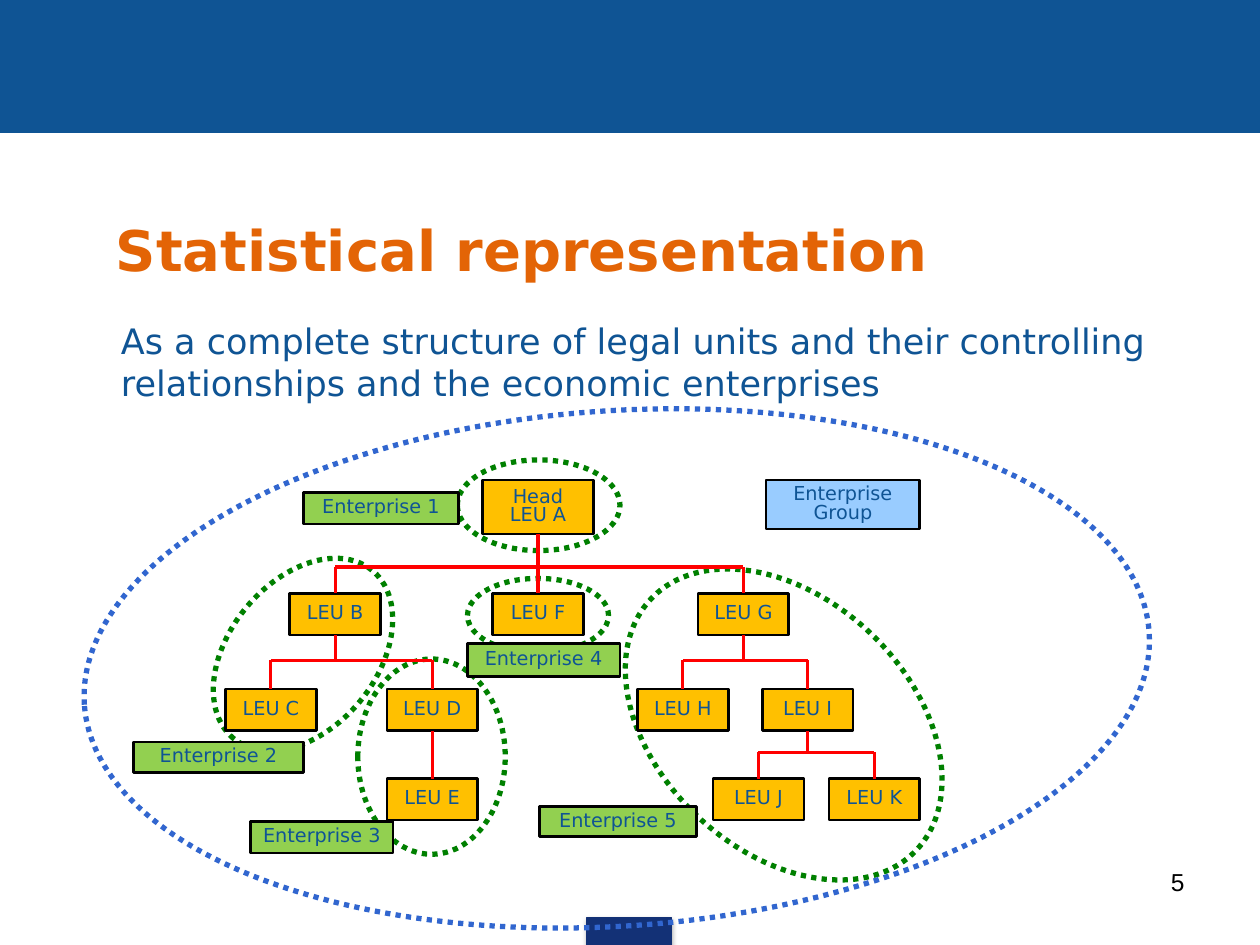
from lxml import etree
from pptx import Presentation
from pptx.dml.color import RGBColor
from pptx.enum.dml import MSO_LINE
from pptx.enum.shapes import MSO_CONNECTOR, MSO_SHAPE
from pptx.enum.text import MSO_ANCHOR, PP_ALIGN
from pptx.oxml import parse_xml
from pptx.oxml.ns import nsdecls, qn
from pptx.util import Inches, Pt

RECT, OVAL = MSO_SHAPE.RECTANGLE, MSO_SHAPE.OVAL
STRAIGHT = MSO_CONNECTOR.STRAIGHT
DOTS = MSO_LINE.ROUND_DOT  # written as sysDot
MIDDLE, TOP = MSO_ANCHOR.MIDDLE, MSO_ANCHOR.TOP
LEFT, CENTER, RIGHT = PP_ALIGN.LEFT, PP_ALIGN.CENTER, PP_ALIGN.RIGHT

BLUE = RGBColor(0x0F, 0x54, 0x94)
NAVY = RGBColor(0x13, 0x31, 0x76)
SKY = RGBColor(0x99, 0xCC, 0xFF)
ROYAL = RGBColor(0x31, 0x66, 0xCF)
GREEN = RGBColor(0x00, 0x80, 0x00)
LIME = RGBColor(0x92, 0xD0, 0x50)
AMBER = RGBColor(0xFF, 0xC0, 0x00)
ORANGE = RGBColor(0xE3, 0x64, 0x06)
RED = RGBColor(0xFF, 0x00, 0x00)
BLACK = RGBColor(0x00, 0x00, 0x00)

TITLE = "Statistical representation"
BODY = ("As a complete structure of legal units and their controlling "
        "relationships and the economic enterprises")

# Legal units: letter -> (left, level)
UNITS = {
    "B": (2.3, 1), "F": (3.91, 1), "G": (5.54, 1),
    "C": (1.79, 2), "D": (3.07, 2), "H": (5.06, 2), "I": (6.05, 2),
    "E": (3.07, 3), "J": (5.66, 3), "K": (6.58, 3),
}
LEVELS = [3.81, 4.71, 5.47, 6.18]
UNIT_W, UNIT_H = 0.72, 0.33
HEAD = (3.83, LEVELS[0], 0.88, 0.43)

# Control: parent -> (children, height of the shared bar)
CONTROL = {"A": ("BFG", 4.5), "B": ("CD", 5.24), "G": ("HI", 5.24),
           "D": ("E", None), "I": ("JK", 5.97)}

# Outlines of enterprises 1 to 5: left, top, width, height, rotation
RINGS = [
    (3.63, 3.65, 1.29, 0.72, 0),
    (1.54, 4.61, 1.73, 1.17, 309.5),
    (2.84, 5.23, 1.17, 1.55, 0),
    (3.71, 4.59, 1.12, 0.59, 0),
    (5.22, 4.3, 2, 2.9, 313.5),
]
GROUP_RING = (0.66, 3.26, 8.47, 4.09, 356.1)

LABELS = [
    ("Enterprise Group", (6.08, 3.81, 1.22, 0.39), SKY),
    ("Enterprise 1", (2.41, 3.91, 1.23, 0.25), LIME),
    ("Enterprise 2", (1.06, 5.89, 1.35, 0.24), LIME),
    ("Enterprise 3", (1.99, 6.52, 1.13, 0.25), LIME),
    ("Enterprise 4", (3.71, 5.11, 1.21, 0.26), LIME),
    ("Enterprise 5", (4.28, 6.4, 1.25, 0.24), LIME),
]

prs = Presentation()
prs.slide_width, prs.slide_height = Inches(10), Inches(7.5)
shapes = prs.slides.add_slide(prs.slide_layouts[6]).shapes


def write(shape, text, size=11, color=BLUE, font="DejaVu Sans", bold=False,
          align=LEFT, anchor=TOP, pads=(0.1, 0.05), spacing=None):
    """Fill a shape with text; pads are the side and top insets in inches."""
    frame = shape.text_frame
    frame.word_wrap = True
    frame.vertical_anchor = anchor
    frame.margin_left = frame.margin_right = Inches(pads[0])
    frame.margin_top = frame.margin_bottom = Inches(pads[1])
    frame.text = text
    for para in frame.paragraphs:
        para.alignment = align
        para.line_spacing = spacing
        for run in para.runs:
            run.font.size, run.font.name = Pt(size), font
            run.font.bold, run.font.color.rgb = bold, color
    return frame


def place(kind, at, fill, line, width):
    shape = shapes.add_shape(kind, *map(Inches, at))
    shape.shadow.inherit = False
    if fill is None:
        shape.fill.background()
    else:
        shape.fill.solid()
        shape.fill.fore_color.rgb = fill
    shape.line.color.rgb, shape.line.width = line, Pt(width)
    return shape


def add_box(text, at, fill):
    box = place(RECT, at, fill, BLACK, 1.5)
    write(box, text, align=CENTER, anchor=MIDDLE, pads=(0.03, 0.01),
          spacing=0.8)
    return box


def add_ring(at, color):
    ring = place(OVAL, at[:4], None, color, 3)
    ring.line.dash_style = DOTS
    ring.rotation = at[4]


def add_text(text, at, **form):
    return write(shapes.add_textbox(*map(Inches, at)), text, **form)


def link(x1, y1, x2, y2, start=None, end=None):
    """Red line; start is joined at its bottom and end at its top."""
    line = shapes.add_connector(STRAIGHT, x1, y1, x2, y2)
    line.line.color.rgb, line.line.width = RED, Pt(1.75)
    etree.SubElement(line._element.spPr, qn("a:effectLst"))
    if start is not None:
        line.begin_connect(start, 2)
    if end is not None:
        line.end_connect(end, 0)


def mid(box):
    return box.left + box.width // 2


def join(parent, kids, bar):
    """Link a unit to the units it controls, by a bar if there are several."""
    x, low = mid(parent), parent.top + parent.height
    if bar is not None:
        y = Inches(bar)
        link(mid(kids[0]), y, mid(kids[-1]), y)
        if all(abs(mid(kid) - x) > Inches(0.01) for kid in kids):
            link(x, low, x, y, start=parent)
    for kid in kids:
        if abs(mid(kid) - x) <= Inches(0.01):
            link(x, low, x, kid.top, start=parent, end=kid)
        else:
            link(mid(kid), y, mid(kid), kid.top, end=kid)


place(RECT, (0, 0, 10, 1.05), BLUE, BLUE, 0.75)
tab = place(RECT, (4.66, 7.28, 0.67, 0.22), NAVY, NAVY, 0.75)
tab._element.spPr.find(qn("a:effectLst")).append(parse_xml(
    f'<a:outerShdw {nsdecls("a")} blurRad="{Pt(3.1)}" dist="{Pt(1.8)}" '
    'dir="5400000" rotWithShape="0"><a:srgbClr val="000000">'
    '<a:alpha val="35000"/></a:srgbClr></a:outerShdw>'))

body = add_text(BODY, (0.48, 2.49, 9, 4.41), size=20)
body.margin_left = Inches(0.48)

for ring in RINGS:
    add_ring(ring, GREEN)

boxes = {"A": add_box("Head\nLEU A", HEAD, AMBER)}
for name, (left, level) in UNITS.items():
    spot = (left, LEVELS[level], UNIT_W, UNIT_H)
    boxes[name] = add_box(f"LEU {name}", spot, AMBER)

for name, (kids, bar) in CONTROL.items():
    join(boxes[name], [boxes[kid] for kid in kids], bar)

for text, at, fill in LABELS:
    add_box(text, at, fill)

add_ring(GROUP_RING, ROYAL)
title = add_text(TITLE, (0.43, 1.47, 9, 1.02), size=32, color=ORANGE,
                 bold=True, anchor=MIDDLE)
title.margin_left = Inches(0.49)
add_text("5", (7.17, 6.83, 2.33, 0.52), size=14, color=BLACK, font="Arial",
         align=RIGHT)

prs.save("out.pptx")
